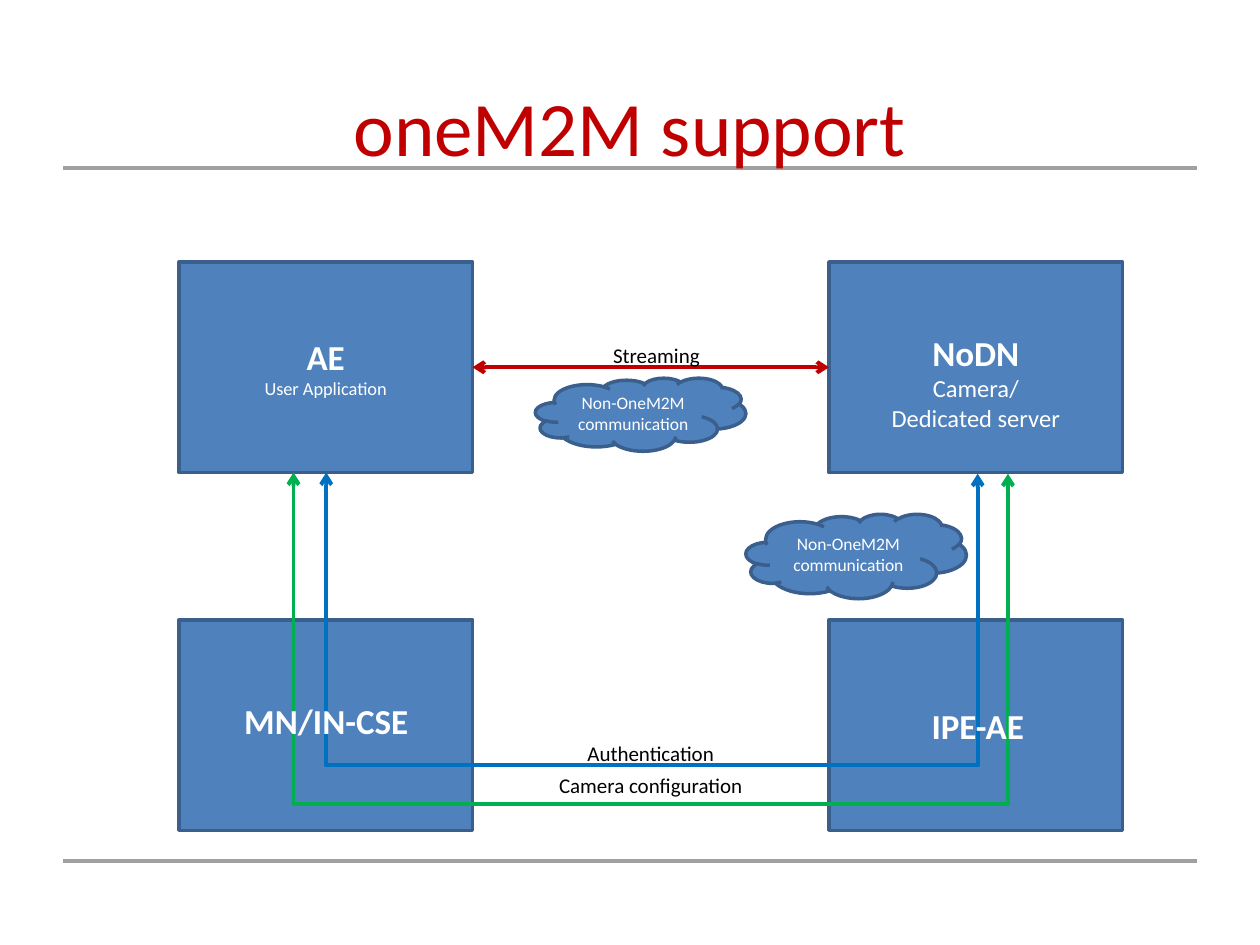
"""Build the oneM2M support slide: four nodes, their links and labels."""
from lxml.etree import SubElement
from pptx import Presentation
from pptx.dml.color import RGBColor
from pptx.enum.shapes import MSO_CONNECTOR as LINK, MSO_SHAPE as SHAPE
from pptx.enum.text import MSO_ANCHOR as ANCHOR, PP_ALIGN as ALIGN
from pptx.oxml.ns import qn
from pptx.util import Inches, Pt


def write(shape, lines, color):
    frame = shape.text_frame
    frame.word_wrap = True
    frame.text = "\n".join(text for text, size, bold in lines)
    for para, (text, size, bold) in zip(frame.paragraphs, lines):
        para.alignment = ALIGN.CENTER
        for span in para.runs:
            span.font.name = "Calibri"
            span.font.size = Pt(size)
            span.font.bold = bold
            span.font.color.rgb = RGBColor.from_string(color)


def style_line(link, color, arrows=True):
    link.line.color.rgb = RGBColor.from_string(color)
    link.line.width = Pt(2.25)
    if arrows:
        outline = link.line._get_or_add_ln()
        for end in ("a:headEnd", "a:tailEnd"):
            SubElement(outline, qn(end), type="arrow")
    SubElement(link._element.spPr, qn("a:effectLst"))


deck = Presentation()
deck.slide_width, deck.slide_height = Inches(10), Inches(7.5)
page = deck.slides.add_slide(deck.slide_layouts[6])
shapes = page.shapes

for y in (6.83, 1.33):
    rule = shapes.add_connector(LINK.STRAIGHT, Inches(0.5), Inches(y), Inches(9.5), Inches(y))
    style_line(rule, "A0A0A3", arrows=False)

left, right, upper, lower = 1.42, 6.58, 2.08, 4.92
CLOUD_TEXT = [("Non-OneM2M communication", 10, False)]
figures = [
    ("CSE", SHAPE.RECTANGLE, left, lower, 2.33, 1.67, []),
    ("AE", SHAPE.RECTANGLE, left, upper, 2.33, 1.67,
     [("AE", 20, True), ("User Application", 10.5, False)]),
    ("NoDN", SHAPE.RECTANGLE, right, upper, 2.33, 1.67,
     [("NoDN", 20, True), ("Camera/", 14, False), ("Dedicated server", 14, False)]),
    ("IPE", SHAPE.RECTANGLE, right, lower, 2.33, 1.67, []),
    ("streaming cloud", SHAPE.CLOUD, 4.25, 3, 1.67, 0.58, CLOUD_TEXT),
    ("camera cloud", SHAPE.CLOUD, 5.92, 4.08, 1.75, 0.67, CLOUD_TEXT),
]
nodes = {}
for key, kind, x, y, width, height, lines in figures:
    node = shapes.add_shape(kind, Inches(x), Inches(y), Inches(width), Inches(height))
    node.shadow.inherit = False
    node.fill.solid()
    node.fill.fore_color.rgb = RGBColor.from_string("4F81BD")
    node.line.color.rgb = RGBColor.from_string("3A5F8C")
    node.line.width = Pt(2)
    node.text_frame.vertical_anchor = ANCHOR.MIDDLE
    if lines:
        write(node, lines, "FFFFFF")
    nodes[key] = node
nodes["NoDN"].text_frame.margin_top = Inches(0.28)

streaming = shapes.add_connector(LINK.STRAIGHT, Inches(3.75), Inches(2.92), Inches(6.58), Inches(2.92))
streaming.begin_connect(nodes["AE"], 3)
streaming.end_connect(nodes["NoDN"], 1)
style_line(streaming, "C00000")

top, rise = 3.75, 0.01
for color, start, end, depth in (("0070C0", 2.59, 7.76, 2.36), ("00B050", 2.33, 8, 2.67)):
    reach = end - start
    link = shapes.add_connector(LINK.ELBOW, Inches(start), Inches(top), Inches(end), Inches(top + rise))
    link.left = Inches((start + end - rise) / 2)
    link.top = Inches(top + (rise - reach) / 2)
    link.width, link.height = Inches(rise), Inches(reach)
    properties = link._element.spPr
    turn = properties.find(qn("a:xfrm"))
    turn.set("rot", "16200000")
    turn.set("flipH", "1")
    bends = properties.find(qn("a:prstGeom")).find(qn("a:avLst"))
    SubElement(bends, qn("a:gd"), name="adj1", fmla=f"val {round(depth / rise * 100000)}")
    style_line(link, color)

for text, x, y, width, height, size, bold, color in (
    ("oneM2M support", 0.5, 0.58, 9, 1.25, 44, False, "C00000"),
    ("Streaming", 3.75, 2.67, 2.92, 0.3, 12, False, "000000"),
    ("MN/IN-CSE", 1.83, 5.5, 1.52, 0.44, 20, True, "FFFFFF"),
    ("IPE-AE", 7.28, 5.54, 0.96, 0.44, 20, True, "FFFFFF"),
    ("Authentication", 3.75, 5.83, 2.83, 0.5, 12, False, "000000"),
    ("Camera configuration", 3.75, 6.08, 2.83, 0.5, 12, False, "000000"),
):
    box = shapes.add_textbox(Inches(x), Inches(y), Inches(width), Inches(height))
    write(box, [(text, size, bold)], color)
    box.text_frame.word_wrap = color != "FFFFFF"

deck.save("out.pptx")
